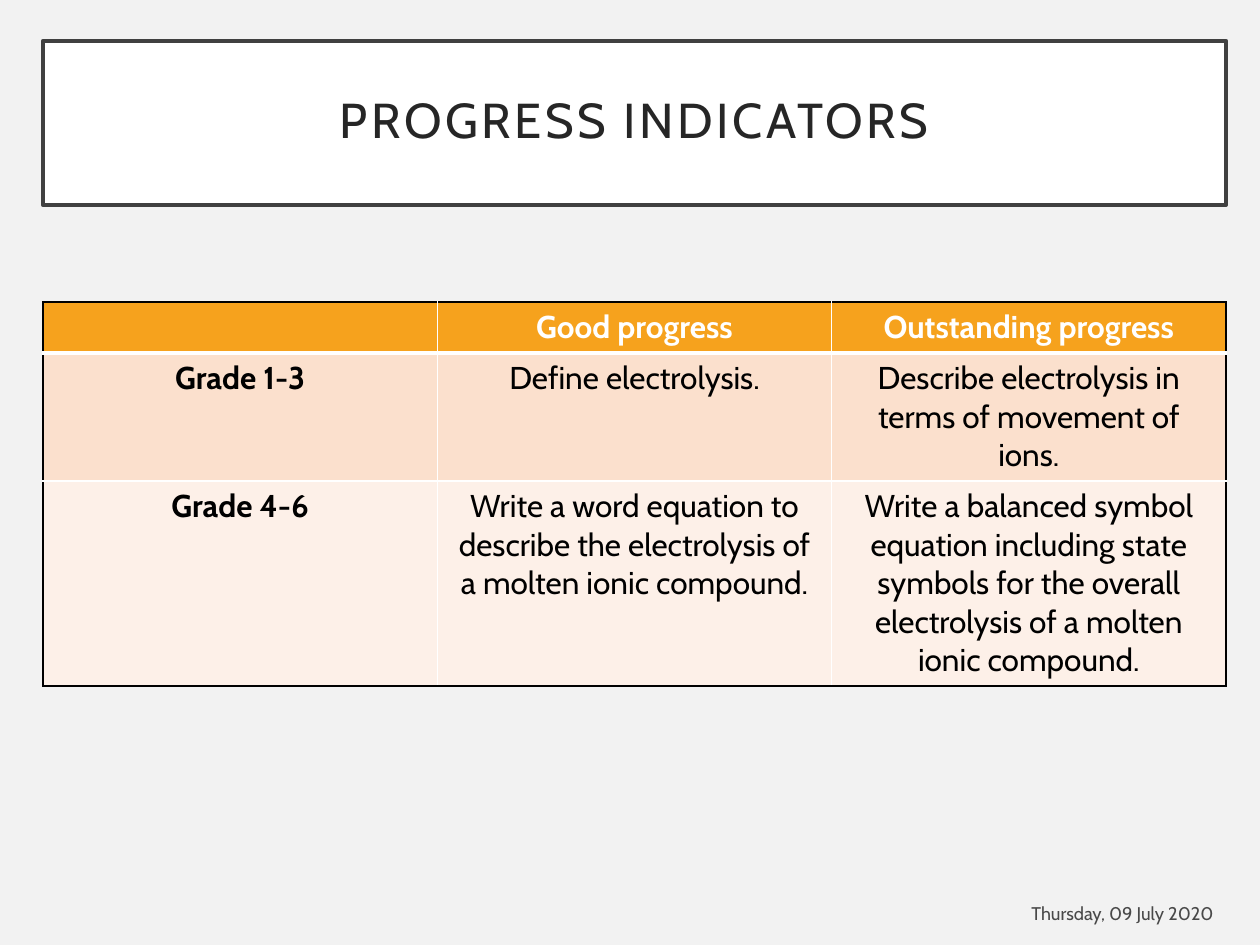
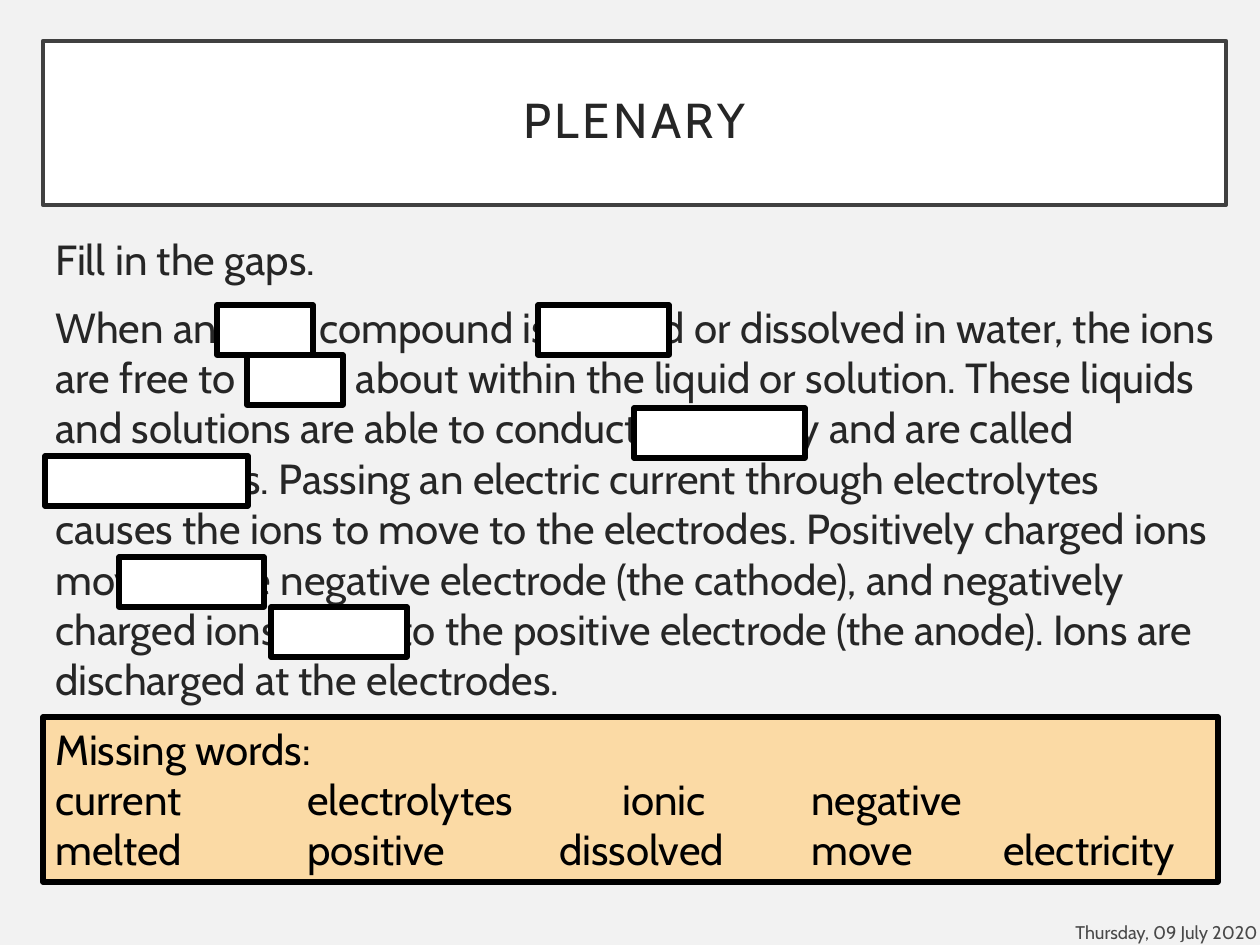
from lxml.etree import SubElement
from pptx import Presentation
from pptx.dml.color import RGBColor
from pptx.enum.shapes import MSO_SHAPE as SHAPE
from pptx.enum.text import MSO_ANCHOR as ANCHOR, PP_ALIGN as ALIGN
from pptx.oxml.ns import qn
from pptx.util import Pt

PX = 914400 // 126
FONT = "Cabin"
BLACK, WHITE, INK, GREY = "000000", "FFFFFF", "262626", "404040"
PAPER, ORANGE, SAND, PEACH, CREAM = "F2F2F2", "F6A21D", "FBDAA5", "FBE0CD", "FDF0E8"
DATE = "Thursday, 09 July 2020"

hue = RGBColor.from_string


def write(par, text, size, color, bold=False, align=ALIGN.LEFT):
    par.alignment = align
    run = par.add_run()
    run.text = text
    run.font.name = FONT
    run.font.size = Pt(size)
    run.font.bold = bold
    run.font.color.rgb = hue(color)
    return run


def frame(shape, fill, line, width):
    """Give a shape a plain fill and outline."""
    shape.fill.solid()
    shape.fill.fore_color.rgb = hue(fill)
    shape.line.color.rgb = hue(line)
    shape.line.width = Pt(width)


prs = Presentation()
prs.slide_width, prs.slide_height = 1260 * PX, 945 * PX

# Shared: background, title band, date
slides = []
for name, left, top in [("PROGRESS INDICATORS", 941, 891), ("PLENARY", 985, 910)]:
    slide = prs.slides.add_slide(prs.slide_layouts[5])
    slides.append(slide)
    slide.background.fill.solid()
    slide.background.fill.fore_color.rgb = hue(PAPER)

    title = slide.shapes.title
    title.left, title.top, title.width, title.height = [n * PX for n in (43, 41, 1183, 164)]
    frame(title, WHITE, GREY, 2.5)
    text = title.text_frame
    text.vertical_anchor = ANCHOR.MIDDLE
    text.margin_left = text.margin_right = text.margin_top = text.margin_bottom = 25 * PX
    text.paragraphs[0].line_spacing = 0.9
    run = write(text.paragraphs[0], name, 28, INK, align=ALIGN.CENTER)
    run.font._element.set("spc", "200")

    text = slide.shapes.add_textbox(left * PX, top * PX, 285 * PX, 44 * PX).text_frame
    text.word_wrap = True
    text.vertical_anchor = ANCHOR.MIDDLE
    write(text.paragraphs[0], DATE, 10.5, "494949", align=ALIGN.RIGHT)

# Progress table
goals, plenary = slides
rows = [
    ["", "Good progress", "Outstanding progress"],
    ["Grade 1-3", "Define electrolysis.",
     "Describe electrolysis in terms of movement of ions."],
    ["Grade 4-6",
     "Write a word equation to describe the electrolysis of a molten ionic compound.",
     "Write a balanced symbol equation including state symbols for the overall "
     "electrolysis of a molten ionic compound."],
]
tall = [51, 128, 205]
table = goals.shapes.add_table(3, 3, 43 * PX, 302 * PX, 1183 * PX, sum(tall) * PX).table
table.first_row = table.horz_banding = False
for col in table.columns:
    col.width = 1183 * PX // 3
for r, (words, high, fill) in enumerate(zip(rows, tall, [ORANGE, PEACH, CREAM])):
    table.rows[r].height = high * PX
    for c, word in enumerate(words):
        cell = table.cell(r, c)
        props = cell._tc.get_or_add_tcPr()
        edges = [("L", c == 0, 1), ("R", c == 2, 1),
                 ("T", r == 0, 3 if r == 1 else 1), ("B", r == 2, 3 if r == 0 else 1)]
        for side, outer, width in edges:
            edge = SubElement(props, qn("a:ln" + side), w=str(Pt(width)))
            solid = SubElement(edge, qn("a:solidFill"))
            SubElement(solid, qn("a:srgbClr"), val=BLACK if outer else WHITE)
        cell.fill.solid()
        cell.fill.fore_color.rgb = hue(fill)
        if word:
            write(cell.text_frame.paragraphs[0], word, 18, BLACK if r else WHITE,
                  r == 0 or c == 0, ALIGN.CENTER)

# Gap text
text = plenary.shapes.add_textbox(43 * PX, 227 * PX, 1184 * PX, 483 * PX).text_frame
text.word_wrap = True
story = [
    "Fill in the gaps.",
    "When an ionic compound is melted or dissolved in water, the ions are free to move "
    "about within the liquid or solution. These liquids and solutions are able to conduct "
    "electricity and are called electrolytes. Passing an electric current through "
    "electrolytes causes the ions to move to the electrodes. Positively charged ions move "
    "to the negative electrode (the cathode), and negatively charged ions move to the "
    "positive electrode (the anode). Ions are discharged at the electrodes.",
]
for i, line in enumerate(story):
    par = text.add_paragraph() if i else text.paragraphs[0]
    par.space_before = Pt(10)
    write(par, line, 24, INK)

# Word bank, with its columns on tab stops
bank = plenary.shapes.add_shape(SHAPE.RECTANGLE, 43 * PX, 717 * PX, 1175 * PX, 165 * PX)
bank.shadow.inherit = False
frame(bank, SAND, BLACK, 3)
text = bank.text_frame
text.word_wrap = True
text.vertical_anchor = ANCHOR.TOP
lines = [
    (["Missing words:"], []),
    (["current", "electrolytes", "ionic", "negative"], [252, 567, 756]),
    (["melted", "positive", "dissolved", "move", "electricity"], [252, 504, 756, 948]),
]
for i, (words, stops) in enumerate(lines):
    par = text.add_paragraph() if i else text.paragraphs[0]
    write(par, "\t".join(words), 24, BLACK)
    if stops:
        tabs = SubElement(par._p.get_or_add_pPr(), qn("a:tabLst"))
        for stop in stops:
            SubElement(tabs, qn("a:tab"), pos=str(stop * PX), algn="l")

# Covers over the missing words
covers = [(217, 305, 96), (538, 305, 131), (247, 355, 96), (634, 408, 171),
          (45, 456, 203), (119, 557, 145), (271, 607, 136)]
for left, top, wide in covers:
    cover = plenary.shapes.add_shape(SHAPE.RECTANGLE, left * PX, top * PX, wide * PX, 50 * PX)
    cover.shadow.inherit = False
    frame(cover, WHITE, BLACK, 3)

prs.save("out.pptx")
